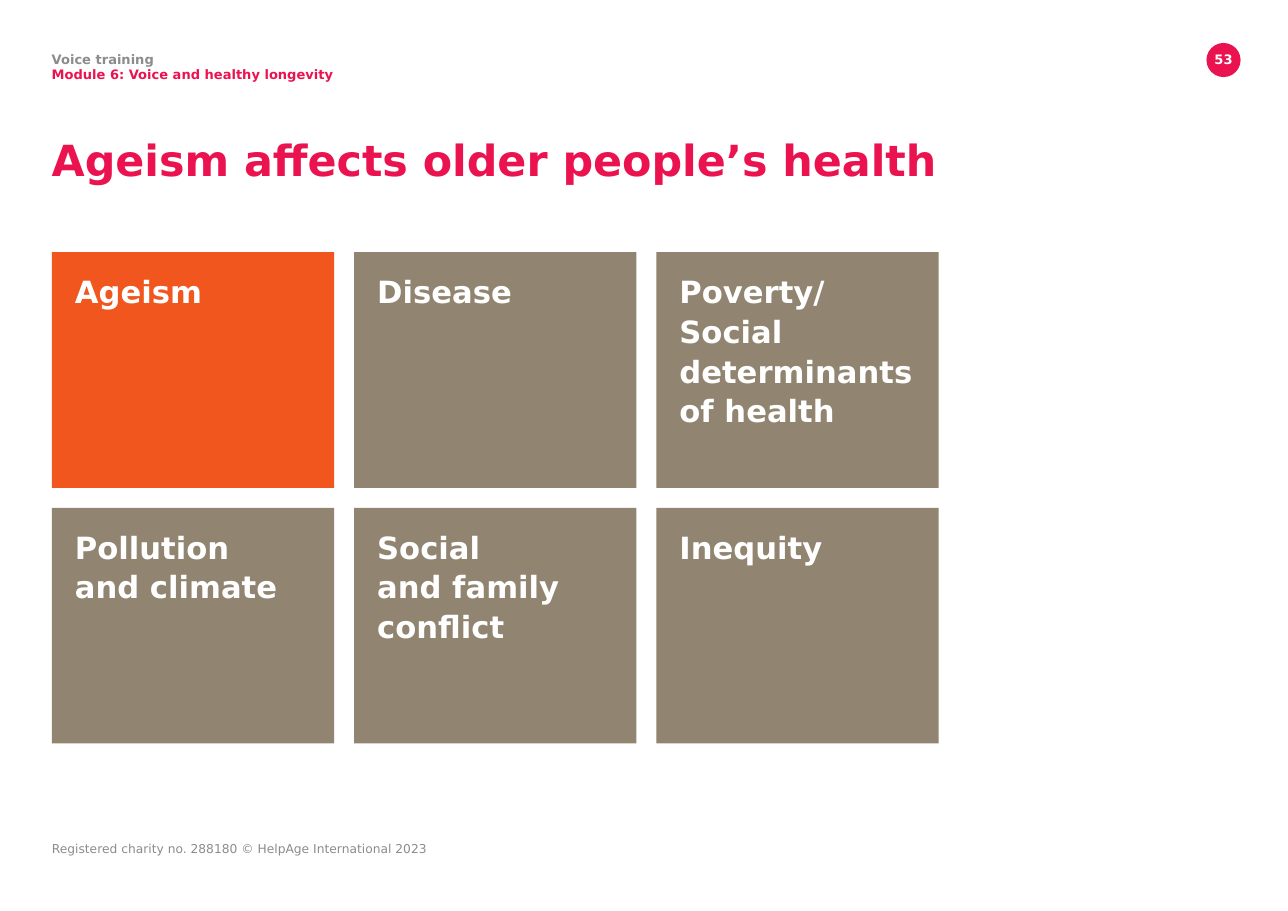
from dataclasses import dataclass
from typing import NamedTuple

from pptx import Presentation
from pptx.dml.color import RGBColor as Rgb
from pptx.enum.shapes import MSO_SHAPE as Shape
from pptx.enum.text import MSO_ANCHOR as Anchor, PP_ALIGN as Align
from pptx.util import Inches, Pt


@dataclass(frozen=True)
class Theme:
    face: str = "DejaVu Sans"
    pink: str = "EB134F"
    grey: str = "8C8C8C"
    white: str = "FFFFFF"
    orange: str = "F0561E"
    taupe: str = "918470"
    title: float = 28
    tile: float = 20
    head: float = 8.5
    foot: float = 8


class Box(NamedTuple):
    left: float
    top: float
    width: float
    height: float

    def emu(self):
        return [Inches(side) for side in self]


THEME = Theme()
WIDTH, HEIGHT = 11.69, 8.27
EDGE = 0.47
COLS, ROWS = 3, 2
GAP = 0.18
TILES = [
    ("Ageism", THEME.orange),
    ("Disease", THEME.taupe),
    ("Poverty/\vSocial determinants of health", THEME.taupe),
    ("Pollution\vand climate", THEME.taupe),
    ("Social\vand family\vconflict", THEME.taupe),
    ("Inequity", THEME.taupe),
]


def apply(target, values):
    for name, value in values.items():
        setattr(target, name, value)


def write(frame, lines, size, bold=True, lead=None, align=Align.LEFT,
          inset=(0, 0, 0, 0)):
    """Fill a text frame with (text, colour) lines; inset is left, top, right, bottom."""
    sides = ("margin_left", "margin_top", "margin_right", "margin_bottom")
    apply(frame, {side: Inches(gap) for side, gap in zip(sides, inset)})
    apply(frame, {"word_wrap": True, "vertical_anchor": Anchor.TOP})
    for index, (text, color) in enumerate(lines):
        para = frame.add_paragraph() if index else frame.paragraphs[0]
        para.text = text
        para.alignment = align
        if lead:
            para.line_spacing = Pt(lead)
        for run in para.runs:
            apply(run.font, {"name": THEME.face, "size": Pt(size), "bold": bold})
            run.font.color.rgb = Rgb.from_string(color)


def label(slide, box, lines, size, **style):
    write(slide.shapes.add_textbox(*box.emu()).text_frame, lines, size, **style)


def block(slide, kind, box, color):
    """Add a plain filled shape without outline or shadow."""
    shape = slide.shapes.add_shape(kind, *box.emu())
    shape.shadow.inherit = False
    shape.fill.solid()
    shape.fill.fore_color.rgb = Rgb.from_string(color)
    shape.line.fill.background()
    return shape


def header(slide, box):
    lines = [("Voice training", THEME.grey),
             ("Module 6: Voice and healthy longevity", THEME.pink)]
    label(slide, box, lines, THEME.head, lead=10)


def badge(slide, box):
    block(slide, Shape.OVAL, box, THEME.pink)
    text = box._replace(top=box.top + box.height / 4, height=box.height * 0.7)
    label(slide, text, [("53", THEME.white)], THEME.head, align=Align.CENTER)


def title(slide, box):
    line = ("Ageism affects older people’s health", THEME.pink)
    label(slide, box, [line], THEME.title, lead=33)


def grid(slide, box):
    wide = (box.width - GAP * (COLS - 1)) / COLS
    high = (box.height - GAP * (ROWS - 1)) / ROWS
    for index, (text, color) in enumerate(TILES):
        row, col = divmod(index, COLS)
        cell = Box(box.left + col * (wide + GAP),
                   box.top + row * (high + GAP), wide, high)
        tile = block(slide, Shape.RECTANGLE, cell, color)
        write(tile.text_frame, [(text, THEME.white)], THEME.tile, lead=26,
              inset=(0.21, 0.16, 0.08, 0.08))


def footer(slide, box):
    line = ("Registered charity no. 288180 © HelpAge International 2023", THEME.grey)
    label(slide, box, [line], THEME.foot, bold=False, inset=(0, 0, 0, 0.05))


def main():
    deck = Presentation()
    apply(deck, {"slide_width": Inches(WIDTH), "slide_height": Inches(HEIGHT)})
    slide = deck.slides.add_slide(deck.slide_layouts[6])
    dot = 0.31
    badge(slide, Box(WIDTH - 0.43 - dot, 0.39, dot, dot))
    footer(slide, Box(EDGE, 7.64, 4.61, 0.33))
    title(slide, Box(EDGE, 1.22, 9.24, 0.77))
    header(slide, Box(EDGE, EDGE, 5.13, 0.44))
    grid(slide, Box(EDGE, 2.29, 8.05, 4.46))
    deck.save("out.pptx")


if __name__ == "__main__":
    main()
